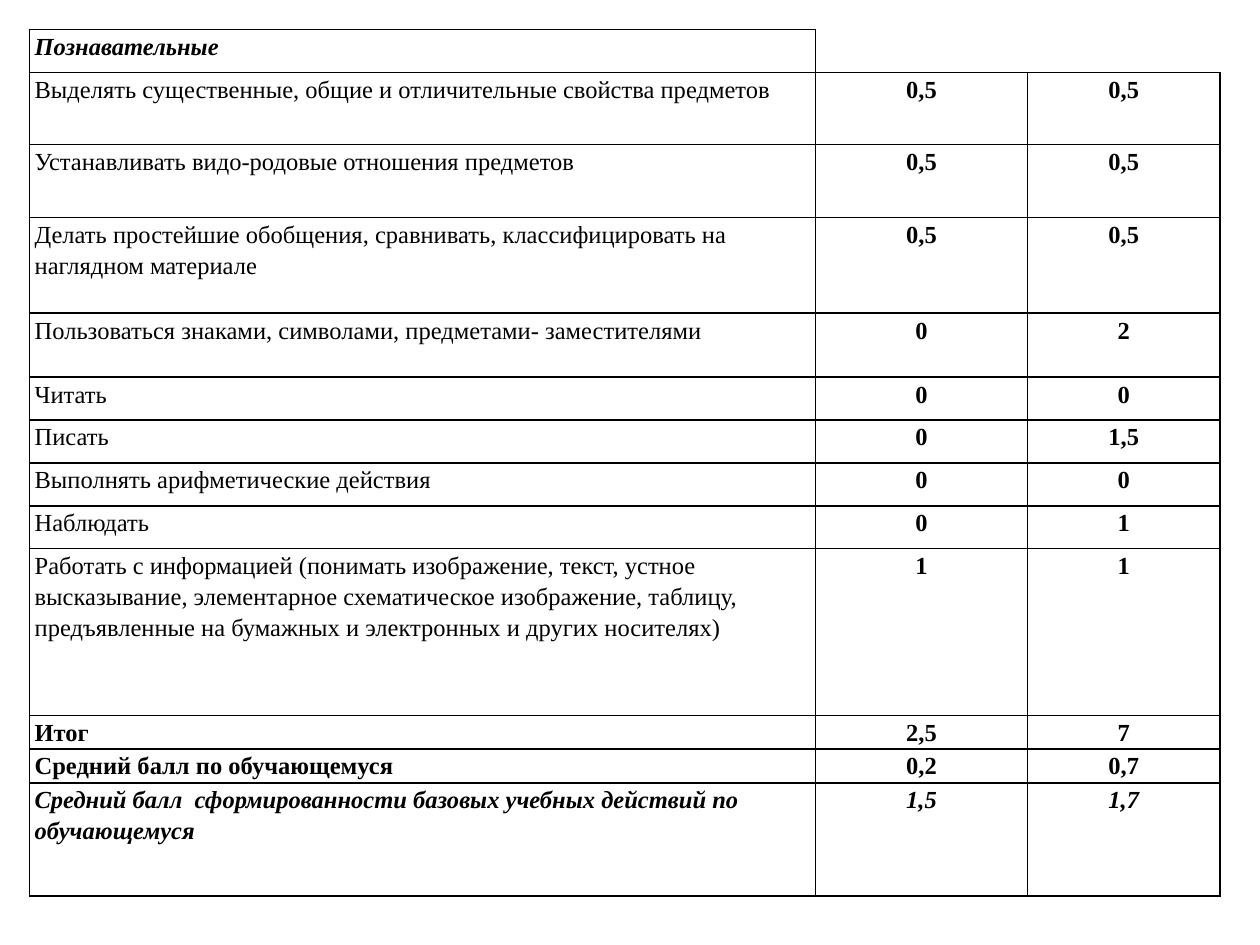
import pptx
import pptx.enum.text
import pptx.oxml
import pptx.oxml.ns
import pptx.util

Pt = pptx.util.Pt
COLORS = {"ink": "000000", "paper": "FFFFFF"}
FONT = "Times New Roman"

PLAIN = {"bold": False, "italic": False}
BOLD = {"bold": True, "italic": False}
BOLD_ITALIC = {"bold": True, "italic": True}

COLUMN_WIDTHS = [449.3, 121, 110.2]

# Row height, label, scores, label format, score format
ROWS = [
    (24.5, "Познавательные", [], BOLD_ITALIC, BOLD),
    (41.2, "Выделять существенные, общие и отличительные свойства предметов",
     ["0,5", "0,5"], PLAIN, BOLD),
    (41.8, "Устанавливать видо-родовые отношения предметов",
     ["0,5", "0,5"], PLAIN, BOLD),
    (54.7, "Делать простейшие обобщения, сравнивать, классифицировать на "
     "наглядном материале", ["0,5", "0,5"], PLAIN, BOLD),
    (36.6, "Пользоваться знаками, символами, предметами- заместителями",
     ["0", "2"], PLAIN, BOLD),
    (24.5, "Читать", ["0", "0"], PLAIN, BOLD),
    (24.5, "Писать", ["0", "1,5"], PLAIN, BOLD),
    (24.5, "Выполнять арифметические действия", ["0", "0"], PLAIN, BOLD),
    (24.5, "Наблюдать", ["0", "1"], PLAIN, BOLD),
    (95.3, "Работать с информацией (понимать изображение, текст, устное "
     "высказывание, элементарное схематическое изображение, таблицу, "
     "предъявленные на бумажных и электронных и других носителях)",
     ["1", "1"], PLAIN, BOLD),
    (19.3, "Итог", ["2,5", "7"], BOLD, BOLD),
    (19.3, "Средний балл по обучающемуся", ["0,2", "0,7"], BOLD, BOLD),
    (64.6, "Средний балл  сформированности базовых учебных действий по "
     "обучающемуся", ["1,5", "1,7"], BOLD_ITALIC, BOLD_ITALIC),
]


def set_borders(cell, visible="LRTB"):
    """Draw the listed sides in ink and switch the others off."""
    tc_pr = cell._tc.get_or_add_tcPr()
    for i, side in enumerate("LRTB"):
        fill = "<a:noFill/>"
        if side in visible:
            fill = f'<a:solidFill><a:srgbClr val="{COLORS["ink"]}"/></a:solidFill>'
        line = pptx.oxml.parse_xml(
            f'<a:ln{side} {pptx.oxml.ns.nsdecls("a")} w="{Pt(1)}">{fill}</a:ln{side}>')
        tc_pr.insert(i, line)


def style_cell(cell, borders="LRTB"):
    margins = {"margin_left": Pt(3), "margin_right": Pt(3),
               "margin_top": 0, "margin_bottom": 0}
    for name, value in margins.items():
        setattr(cell, name, value)
    cell.fill.solid()
    cell.fill.fore_color.rgb = pptx.dml.color.RGBColor.from_string(COLORS["paper"])
    set_borders(cell, borders)


def write_cell(cell, text, style, align):
    p = cell.text_frame.paragraphs[0]
    p.alignment = align
    p.line_spacing = 1.15
    r = p.add_run()
    r.text = text
    for name, value in {"name": FONT, "size": Pt(14), **style}.items():
        setattr(r.font, name, value)
    r.font.color.rgb = pptx.dml.color.RGBColor.from_string(COLORS["ink"])


def add_score_table(s, left, top, width, height):
    shape = s.shapes.add_table(len(ROWS), len(COLUMN_WIDTHS), Pt(left), Pt(top),
                               Pt(width), Pt(height))
    table = shape.table
    table.first_row = table.horz_banding = False
    for column, column_width in zip(table.columns, COLUMN_WIDTHS):
        column.width = Pt(column_width)

    align = pptx.enum.text.PP_ALIGN
    for i, (row_height, label, scores, label_style, score_style) in enumerate(ROWS):
        table.rows[i].height = Pt(row_height)
        label_cell, *score_cells = table.rows[i].cells
        style_cell(label_cell)
        write_cell(label_cell, label, label_style, align.LEFT)
        for j, cell in enumerate(score_cells):
            # The heading row has an open area beside it
            style_cell(cell, "LRTB" if scores else ("LB", "B")[j])
        for cell, score in zip(score_cells, scores):
            write_cell(cell, score, score_style, align.CENTER)
    table.cell(0, 1).merge(table.cell(0, 2))


def main():
    prs = pptx.Presentation()
    prs.slide_width, prs.slide_height = Pt(720), Pt(540)
    s = prs.slides.add_slide(prs.slide_layouts[6])
    add_score_table(s, 16.8, 16.8, sum(COLUMN_WIDTHS), sum(row[0] for row in ROWS))
    prs.save("out.pptx")


if __name__ == "__main__":
    main()
